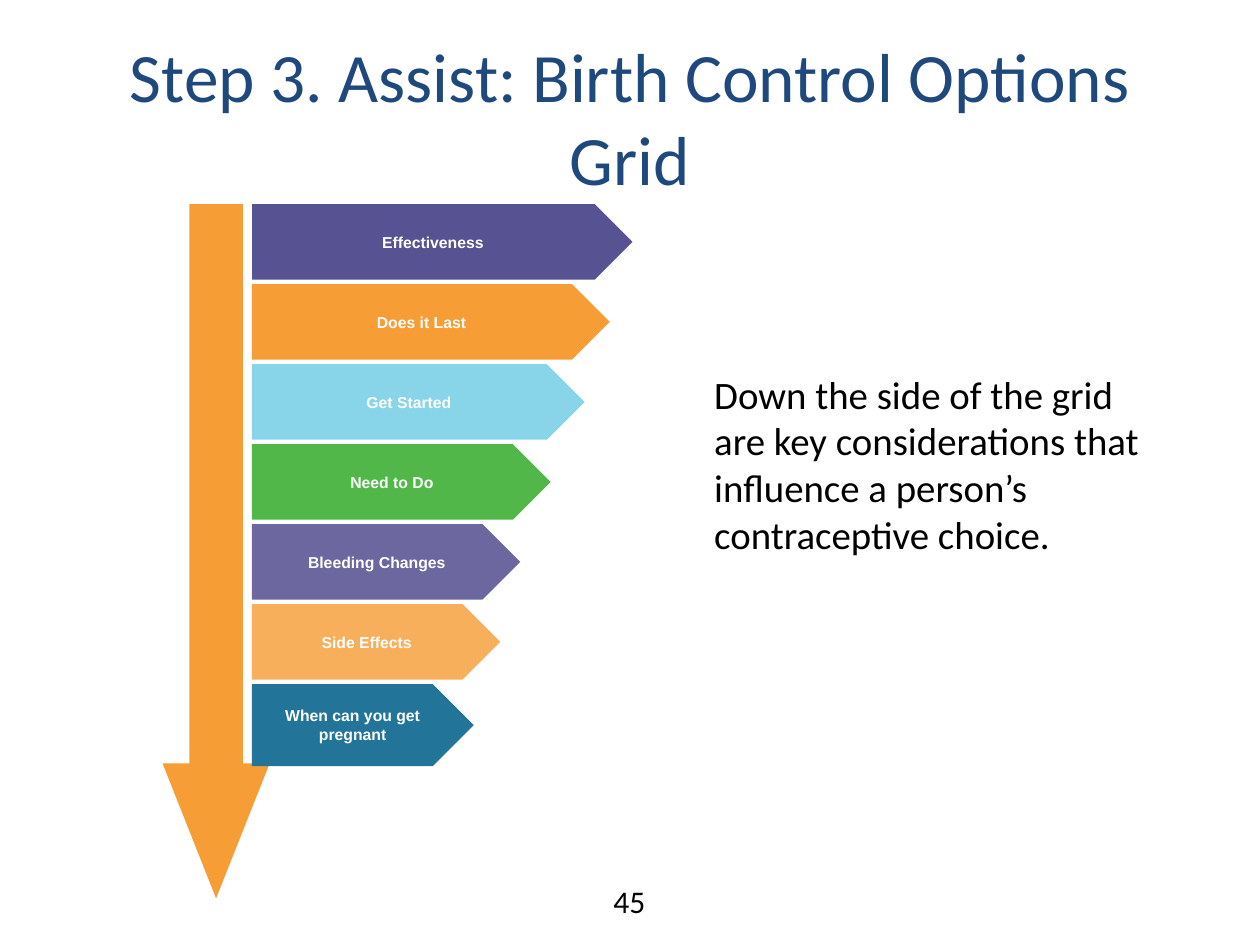
from pptx import Presentation
from pptx import util as u
from pptx.dml.color import RGBColor
from pptx.enum import shapes, text
from pptx.oxml import ns
from lxml import etree

NAVY = RGBColor(0x1F, 0x49, 0x7D)
BLACK = RGBColor(0, 0, 0)
WHITE = RGBColor(255, 255, 255)
PURPLE = RGBColor(0x57, 0x52, 0x91)
ORANGE = RGBColor(0xF6, 0x9D, 0x35)
SKY = RGBColor(0x88, 0xD4, 0xE9)
GREEN = RGBColor(0x51, 0xB7, 0x48)
TEAL = RGBColor(0x23, 0x74, 0x99)

# label, width in inches, colour, opacity in percent
CONSIDERATIONS = [
    ("Effectiveness", 3.02, PURPLE, 100),
    ("Does it Last", 2.84, ORANGE, 100),
    ("Get Started", 2.64, SKY, 100),
    ("Need to Do", 2.37, GREEN, 100),
    ("Bleeding Changes", 2.13, PURPLE, 87),
    ("Side Effects", 1.97, ORANGE, 81),
    ("When can you get pregnant", 1.76, TEAL, 100),
]


def write(shape, words, size, color, font="Calibri", bold=False,
          align=text.PP_ALIGN.CENTER, anchor=text.MSO_ANCHOR.MIDDLE):
    frame = shape.text_frame
    frame.word_wrap = True
    frame.vertical_anchor = anchor
    paragraph = frame.paragraphs[0]
    paragraph.text = words
    paragraph.alignment = align
    paragraph.font.name = font
    paragraph.font.size = u.Pt(size)
    paragraph.font.bold = bold
    paragraph.font.color.rgb = color


def add_text(slide, left, top, width, height, words, size, color, **style):
    box = slide.shapes.add_textbox(
        u.Inches(left), u.Inches(top), u.Inches(width), u.Inches(height))
    write(box, words, size, color, **style)


def add_filled(slide, kind, left, top, width, height, color, opacity=100):
    shape = slide.shapes.add_shape(
        kind, u.Inches(left), u.Inches(top), u.Inches(width), u.Inches(height))
    shape.shadow.inherit = False
    shape.line.fill.background()
    shape.fill.solid()
    shape.fill.fore_color.rgb = color
    if opacity < 100:
        color_element = shape.fill._xPr.find(".//" + ns.qn("a:srgbClr"))
        etree.SubElement(color_element, ns.qn("a:alpha"), val=str(opacity * 1000))
    return shape


def add_considerations(slide, left, top):
    """Down arrow with a stack of tapering tags along its right side."""
    arrow = add_filled(slide, shapes.MSO_SHAPE.DOWN_ARROW, left, top, 0.85, 5.51, ORANGE)
    arrow.adjustments[1] = 1.26
    pitch = 3.81 / (len(CONSIDERATIONS) - 1)
    for row, (label, width, color, opacity) in enumerate(CONSIDERATIONS):
        height = 0.65 if row == len(CONSIDERATIONS) - 1 else 0.6
        tag = add_filled(slide, shapes.MSO_SHAPE.PENTAGON, left + 0.71,
                         top + row * pitch, width, height, color, opacity)
        write(tag, label, 9, WHITE, font="Arial", bold=True)


def main():
    presentation = Presentation()
    presentation.slide_width = u.Inches(10)
    presentation.slide_height = u.Inches(7.5)
    slide = presentation.slides.add_slide(presentation.slide_layouts[6])

    add_text(slide, 0.5, 0.3, 9, 1.25,
             "Step 3. Assist: Birth Control Options Grid", 39.6, NAVY)
    add_text(slide, 5.57, 2.89, 3.59, 1.8,
             "Down the side of the grid are key considerations that "
             "influence a person’s contraceptive choice.", 22.2, BLACK,
             align=text.PP_ALIGN.LEFT, anchor=text.MSO_ANCHOR.TOP)
    add_text(slide, 3.83, 6.95, 2.33, 0.4, "45", 18, BLACK,
             anchor=text.MSO_ANCHOR.TOP)
    add_considerations(slide, 1.29, 1.62)

    presentation.save("out.pptx")


if __name__ == "__main__":
    main()
